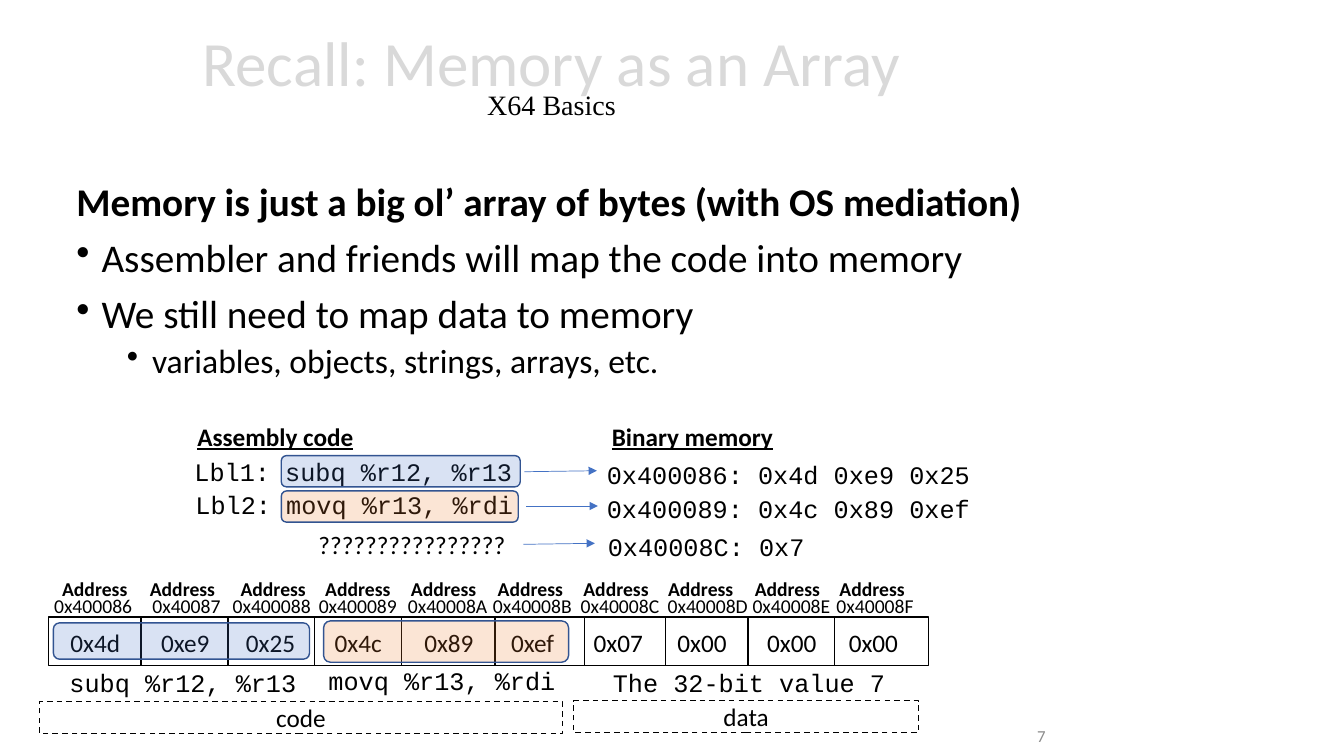
import dataclasses
import itertools
import typing

import pptx
import pptx.dml.color
import pptx.enum.dml
import pptx.enum.shapes
import pptx.enum.text
import pptx.oxml
import pptx.oxml.ns
import pptx.shapes.autoshape
import pptx.slide
import pptx.text.text
import pptx.util

RGBColor = pptx.dml.color.RGBColor
BLACK = RGBColor(0x00, 0x00, 0x00)
WHITE = RGBColor(0xFF, 0xFF, 0xFF)
PALE_GREY = RGBColor(0xD9, 0xD9, 0xD9)
MID_GREY = RGBColor(0x8C, 0x8C, 0x8C)
BLUE = RGBColor(0x44, 0x72, 0xC4)
ORANGE = RGBColor(0xED, 0x7D, 0x31)
NAVY = RGBColor(0x32, 0x54, 0x91)

COLUMNS, ROWS = 13.33, 7.5
UNIT = pptx.util.Inches(1)  # one grid column or row
SANS, CODE, SERIF = "Calibri", "Courier New", "Times New Roman"
ALIGN = pptx.enum.text.PP_ALIGN
ANCHOR = pptx.enum.text.MSO_ANCHOR
SHAPE = pptx.enum.shapes.MSO_SHAPE


class Area(typing.NamedTuple):
    """Left, top, width and height in grid columns and rows."""
    left: float
    top: float
    width: float
    height: float

    def emu(self) -> list[int]:
        return [round(length * UNIT) for length in self]


@dataclasses.dataclass(frozen=True)
class Style:
    size: float = 18
    font: str = SANS
    color: RGBColor = BLACK
    bold: bool = False
    underline: bool = False


@dataclasses.dataclass(frozen=True)
class Bullet:
    text: str
    style: Style
    level: int = 0
    indent: float = 0
    space: float = 10


@dataclasses.dataclass(frozen=True)
class Byte:
    """One memory cell with the left edges and widths of its texts."""
    address: str
    value: str
    cell: float
    heading: float
    label: float
    label_width: float
    value_left: float


class Label(typing.NamedTuple):
    text: str
    left: float
    top: float
    width: float
    style: Style


class Highlight(typing.NamedTuple):
    area: Area
    color: RGBColor


PLAIN, MONO = Style(), Style(font=CODE)
HEADING = Style(bold=True, underline=True)
ADDRESS, ADDRESS_HEADING = Style(14), Style(14, bold=True)

BULLETS = [
    Bullet("Memory is just a big ol’ array of bytes (with OS mediation)", Style(28, bold=True)),
    Bullet("Assembler and friends will map the code into memory", Style(28), indent=0.25),
    Bullet("We still need to map data to memory", Style(28), indent=0.25),
    Bullet("variables, objects, strings, arrays, etc.", Style(24), 1, 0.75, 5),
]

# Back to front: each cell overlaps its neighbour slightly.
BYTES = [
    Byte("0x40008D", "0x00", 6.56, 6.56, 6.59, 0.86, 6.62),
    Byte("0x40008E", "0x00", 7.42, 7.42, 7.42, 0.86, 7.51),
    Byte("0x40008F", "0x00", 8.28, 8.26, 8.25, 0.86, 8.32),
    Byte("0x40008C", "0x07", 5.67, 5.72, 5.71, 0.88, 5.79),
    Byte("0x40008B", "0xef", 4.87, 4.87, 4.84, 0.88, 4.97),
    Byte("0x400086", "0x4d", 0.48, 0.55, 0.46, 0.93, 0.60),
    Byte("0x40087", "0xe9", 1.40, 1.42, 1.46, 0.78, 1.50),
    Byte("0x400088", "0x25", 2.26, 2.32, 2.29, 0.81, 2.34),
    Byte("0x400089", "0x4c", 3.12, 3.16, 3.10, 0.90, 3.22),
    Byte("0x40008A", "0x89", 3.98, 4.01, 4.00, 0.88, 4.11),
]

LABELS = [
    Label("Assembly code", 1.86, 4.13, 1.76, HEADING),
    Label("Binary memory", 5.97, 4.13, 1.81, HEADING),
    Label("Lbl1: subq %r12, %r13", 1.83, 4.48, 3.37, MONO),
    Label("Lbl2: movq %r13, %rdi", 1.84, 4.81, 3.37, MONO),
    Label("????????????????", 3.06, 5.20, 2.08, PLAIN),
    Label("0x400086: 0x4d 0xe9 0x25", 5.92, 4.51, 3.82, MONO),
    Label("0x400089: 0x4c 0x89 0xef", 5.92, 4.84, 3.82, MONO),
    Label("0x40008C: 0x7", 5.93, 5.22, 2.16, MONO),
    Label("subq %r12, %r13", 0.59, 6.57, 2.46, MONO),
    Label("movq %r13, %rdi", 3.16, 6.55, 2.46, MONO),
    Label("The 32-bit value 7", 5.98, 6.57, 2.92, MONO),
]

HIGHLIGHTS = [
    Highlight(Area(2.79, 4.87, 2.35, 0.31), ORANGE),
    Highlight(Area(2.79, 4.52, 2.37, 0.31), BLUE),
    Highlight(Area(0.53, 6.18, 2.54, 0.36), BLUE),
    Highlight(Area(3.21, 6.16, 2.43, 0.41), ORANGE),
]
REGIONS = {"code": Area(0.39, 6.96, 5.19, 0.32), "data": Area(5.69, 6.95, 3.42, 0.32)}
ARROWS = [(5.2, 4.68, 5.92, 4.67), (5.22, 5.02, 5.93, 5.02), (5.19, 5.4, 5.9, 5.39)]


def add_span(para: pptx.text.text._Paragraph, text: str, style: Style) -> None:
    span = para.add_run()
    span.text = text
    span.font.name, span.font.size = style.font, pptx.util.Pt(style.size)
    span.font.bold, span.font.underline = style.bold, style.underline
    span.font.color.rgb = style.color


def add_frame(page: pptx.slide.Slide, area: Area, anchor: ANCHOR = ANCHOR.TOP,
              wrap: bool = True) -> pptx.text.text.TextFrame:
    frame = page.shapes.add_textbox(*area.emu()).text_frame
    frame.word_wrap, frame.vertical_anchor = wrap, anchor
    return frame


def add_label(page: pptx.slide.Slide, label: Label) -> None:
    frame = add_frame(page, Area(label.left, label.top, label.width, 0.4), wrap=False)
    frame.auto_size = pptx.enum.text.MSO_AUTO_SIZE.SHAPE_TO_FIT_TEXT
    add_span(frame.paragraphs[0], label.text, label.style)


def add_caption(page: pptx.slide.Slide, text: str, area: Area, style: Style) -> None:
    """Centred text without side margins, above a memory cell."""
    frame = add_frame(page, area)
    frame.margin_left = frame.margin_right = 0
    frame.paragraphs[0].alignment = ALIGN.CENTER
    add_span(frame.paragraphs[0], text, style)


def add_box(page: pptx.slide.Slide, area: Area, fill: RGBColor = WHITE, line: RGBColor = BLACK,
            kind: SHAPE = SHAPE.RECTANGLE) -> pptx.shapes.autoshape.Shape:
    box = page.shapes.add_shape(kind, *area.emu())
    box.shadow.inherit = False
    box.fill.solid()
    box.fill.fore_color.rgb = fill
    box.line.color.rgb, box.line.width = line, pptx.util.Pt(1)
    return box


def add_highlight(page: pptx.slide.Slide, highlight: Highlight) -> None:
    box = add_box(page, highlight.area, highlight.color, NAVY, SHAPE.ROUNDED_RECTANGLE)
    color = box.fill._xPr.find(".//" + pptx.oxml.ns.qn("a:srgbClr"))
    color.append(pptx.oxml.parse_xml(f'<a:alpha {pptx.oxml.ns.nsdecls("a")} val="20000"/>'))


def add_region(page: pptx.slide.Slide, text: str, area: Area) -> None:
    box = add_box(page, area)
    box.line.dash_style = pptx.enum.dml.MSO_LINE.DASH
    box.text_frame.vertical_anchor = ANCHOR.MIDDLE
    box.text_frame.paragraphs[0].alignment = ALIGN.CENTER
    add_span(box.text_frame.paragraphs[0], text, PLAIN)


def add_arrow(page: pptx.slide.Slide, ends: tuple[float, ...]) -> None:
    arrow = page.shapes.add_connector(pptx.enum.shapes.MSO_CONNECTOR.STRAIGHT,
                                      *(round(end * UNIT) for end in ends))
    arrow.line.color.rgb, arrow.line.width = BLUE, pptx.util.Pt(0.5)
    namespace = pptx.oxml.ns.nsdecls("a")
    arrow.line._get_or_add_ln().append(
        pptx.oxml.parse_xml(f'<a:tailEnd {namespace} type="triangle"/>'))
    arrow._element.spPr.append(pptx.oxml.parse_xml(f"<a:effectLst {namespace}/>"))


def add_title(page: pptx.slide.Slide) -> None:
    para = add_frame(page, Area(1.16, 0.09, 8.62, 1.45), ANCHOR.MIDDLE).paragraphs[0]
    para.alignment, para.line_spacing = ALIGN.CENTER, 0.7
    add_span(para, "Recall: Memory as an Array", Style(45, color=PALE_GREY))
    para.add_line_break()
    add_span(para, "X64 Basics", Style(20, SERIF))


def add_bullets(page: pptx.slide.Slide) -> None:
    frame = add_frame(page, Area(0.66, 1.76, 9.67, 2.26))
    paras = itertools.chain(frame.paragraphs, iter(frame.add_paragraph, None))
    for bullet, para in zip(BULLETS, paras):
        para.level, para.line_spacing = bullet.level, 0.9
        para.space_before = pptx.util.Pt(bullet.space)
        add_span(para, bullet.text, bullet.style)
        if bullet.indent:
            properties = para._p.get_or_add_pPr()
            properties.set("marL", str(round(bullet.indent * UNIT)))
            properties.set("indent", str(round(-0.25 * UNIT)))
            properties.append(pptx.oxml.parse_xml(
                f'<a:buChar {pptx.oxml.ns.nsdecls("a")} char="•"/>'))


def add_memory(page: pptx.slide.Slide) -> None:
    for byte in BYTES:
        add_box(page, Area(byte.cell, 6.12, 0.93, 0.48))
    for byte in BYTES:
        add_caption(page, "Address", Area(byte.heading, 5.67, 0.78, 0.34), ADDRESS_HEADING)
        add_caption(page, byte.address, Area(byte.label, 5.84, byte.label_width, 0.34), ADDRESS)
        add_label(page, Label(byte.value, byte.value_left, 6.17, 0.69, PLAIN))


def main() -> None:
    deck = pptx.Presentation()
    deck.slide_width, deck.slide_height = round(COLUMNS * UNIT), round(ROWS * UNIT)
    page = deck.slides.add_slide(deck.slide_layouts[6])
    add_title(page)
    number = add_frame(page, Area(8.22, 7.1, 2.25, 0.4), ANCHOR.MIDDLE).paragraphs[0]
    number.alignment = ALIGN.RIGHT
    add_span(number, "7", Style(12, color=MID_GREY))
    add_bullets(page)
    add_memory(page)
    for text, area in REGIONS.items():
        add_region(page, text, area)
    for label in LABELS:
        add_label(page, label)
    for highlight in HIGHLIGHTS:
        add_highlight(page, highlight)
    for ends in ARROWS:
        add_arrow(page, ends)
    deck.save("out.pptx")


if __name__ == "__main__":
    main()
